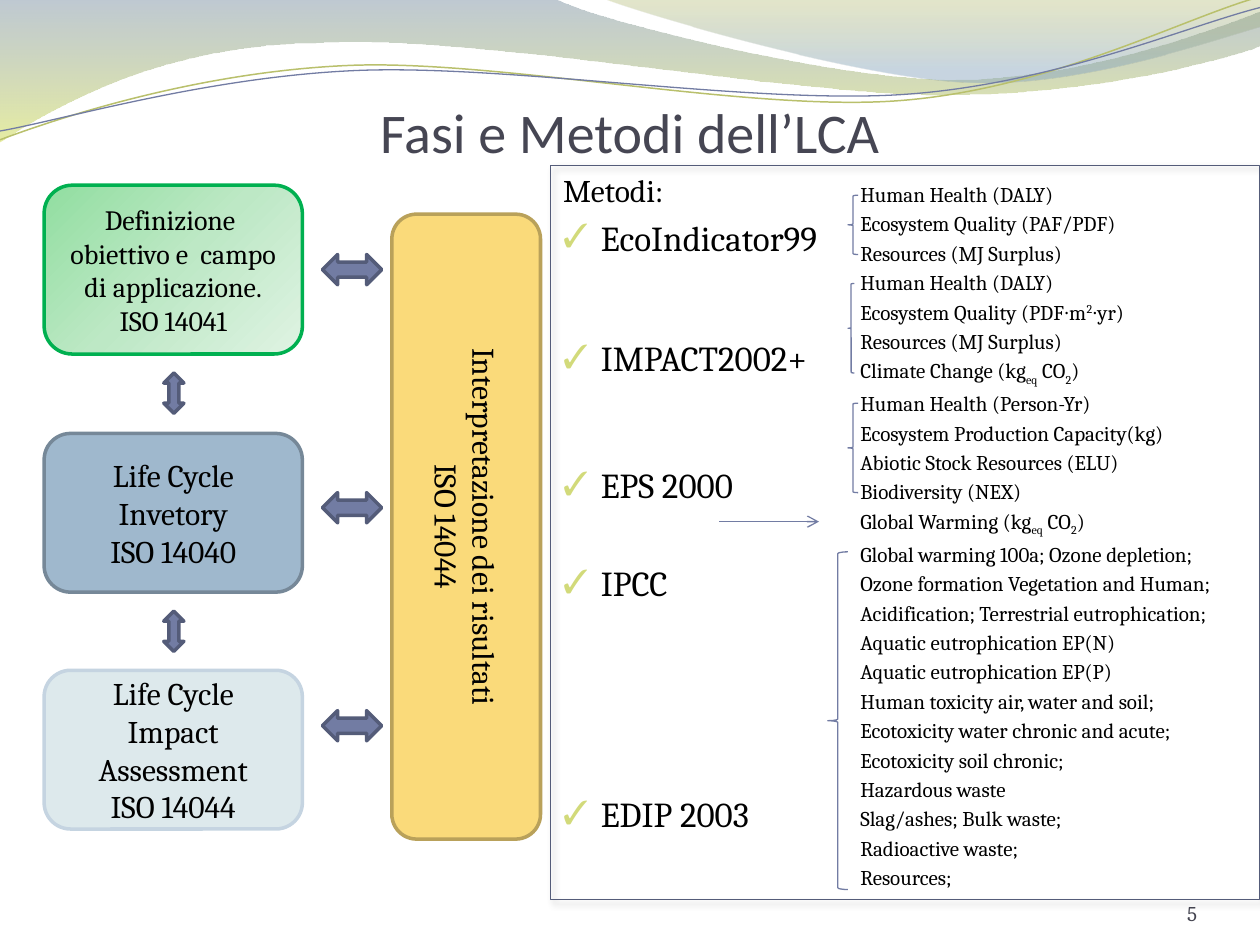
from lxml import etree
from pptx import Presentation
from pptx import util as u
from pptx.dml.color import RGBColor
from pptx.enum import shapes, text
from pptx.oxml import ns, parse_xml

Inches, Pt = u.Inches, u.Pt
KIND = shapes.MSO_SHAPE
ALIGN = text.PP_ALIGN
ANCHOR = text.MSO_ANCHOR

BLACK = RGBColor(0, 0, 0)
TITLE_GREY = RGBColor(0x46, 0x46, 0x53)
NUMBER_GREY = RGBColor(0x43, 0x43, 0x4F)
INDIGO = RGBColor(0x72, 0x7C, 0xA3)
DARK_INDIGO = RGBColor(0x54, 0x5C, 0x79)
OLIVE = RGBColor(0xB9, 0xC0, 0x6C)
LIME = RGBColor(0xD2, 0xDA, 0x7A)
GREEN = RGBColor(0x00, 0xB0, 0x50)
BLUE = RGBColor(0x9F, 0xB8, 0xCD)
SLATE = RGBColor(0x76, 0x88, 0x98)
PALE = RGBColor(0xDD, 0xE9, 0xEC)
PALE_EDGE = RGBColor(0xC5, 0xD4, 0xE1)
YELLOW = RGBColor(0xFA, 0xDA, 0x7A)
OCHRE = RGBColor(0xB9, 0xA1, 0x5A)

GREEN_STOPS = [(0, "91DEA0", 100), (50, "BDE8C5", 100), (100, "DFF3E3", 100)]

# Start point, segments (three points make a Bezier curve, one a straight line),
# gradient stops, line colour and width
WAVES = [
    ((0, -0.01), [[(4.4, -0.01)], [(4.76, 0.17), (6.64, 0.63), (7.58, 0.63)],
     [(8.53, 0.63), (9.58, 0.26), (10, 0.09)], [(10.01, 0.36)],
     [(9.83, 0.44), (8.7, 0.76), (7.46, 0.75)], [(6.22, 0.75), (3.82, 0.28), (2.57, 0.34)],
     [(1.29, 0.35), (0.46, 0.83), (-0.01, 1.13)]],
     [(0, "72889B", 45), (100, "D3DE57", 55)], None),
    ((4.79, -0.01), [[(5.09, 0.11), (6.82, 0.62), (7.69, 0.65)],
     [(8.56, 0.69), (9.61, 0.32), (10, 0.21)], [(10, 0)]],
     [(0, "A4AC50", 30), (80, "84A3BD", 45)], None),
    ((0, 1.11), [[(0.48, 0.93), (1.58, 0.57), (2.77, 0.52)],
     [(3.95, 0.47), (5.93, 0.89), (7.13, 0.8)], [(8.33, 0.71), (9.38, 0.15), (9.98, -0.02)]],
     None, (OLIVE, 0.85)),
    ((0, 1.04), [[(0.47, 0.96), (1.64, 0.61), (2.83, 0.56)],
     [(4.03, 0.51), (5.97, 0.83), (7.17, 0.75)], [(8.36, 0.67), (9.41, 0.21), (10, 0.06)]],
     None, (INDIGO, 0.75)),
]

# Method name and the space above it in points
METHODS = [("EcoIndicator99", 4), ("IMPACT2002+", 45), ("EPS 2000", 48.6),
           ("IPCC", 31.7), ("EDIP 2003", 108)]

# "|" separates runs; "^" raises a run and "_" lowers it
CATEGORIES = [
    "Human Health (DALY)", "Ecosystem Quality (PAF/PDF)", "Resources (MJ Surplus)",
    "Human Health (DALY)", "Ecosystem Quality (PDF∙m|^2|∙yr)", "Resources (MJ Surplus)",
    "Climate Change (kg|_eq| CO|_2|)",
    "Human Health (Person-Yr)", "Ecosystem Production Capacity(kg)",
    "Abiotic Stock Resources (ELU)", "Biodiversity (NEX)",
    "Global Warming (kg|_eq| CO|_2|)",
    "Global warming 100a; Ozone depletion;", "Ozone formation Vegetation and Human;",
    "Acidification; Terrestrial eutrophication;", "Aquatic eutrophication EP(N)",
    "Aquatic eutrophication EP(P)", "Human toxicity air, water and soil;",
    "Ecotoxicity water chronic and acute;", "Ecotoxicity soil chronic;",
    "Hazardous waste", "Slag/ashes; Bulk waste;", "Radioactive waste;", "Resources;",
]
BASELINES = {"^": "30000", "_": "-25000"}


def fill_gradient(shape, stops, angle):
    """Stops are (position %, colour, opacity %)."""
    stop_xml = "".join(
        f'<a:gs pos="{pos * 1000}"><a:srgbClr val="{color}">'
        f'<a:alpha val="{alpha * 1000}"/></a:srgbClr></a:gs>' for pos, color, alpha in stops)
    shape.fill.background()
    properties = shape._element.spPr
    properties.replace(properties.find(ns.qn("a:noFill")), parse_xml(
        f'<a:gradFill {ns.nsdecls("a")} rotWithShape="1"><a:gsLst>{stop_xml}</a:gsLst>'
        f'<a:lin ang="{angle * 60000}" scaled="0"/></a:gradFill>'))


def style(shape, fill=None, line=None, width=0.75):
    shape.shadow.inherit = False
    if fill is None:
        shape.fill.background()
    else:
        shape.fill.solid()
        shape.fill.fore_color.rgb = fill
    if line is None:
        shape.line.fill.background()
    else:
        shape.line.color.rgb = line
        shape.line.width = Pt(width)


def add_box(slide, kind, box, fill=None, line=None, width=0.75):
    shape = slide.shapes.add_shape(kind, *map(Inches, box))
    style(shape, fill, line, width)
    return shape


def write(paragraph, content, size, color=BLACK, font="Cambria", align=ALIGN.LEFT):
    for piece in content.split("|"):
        run = paragraph.add_run()
        run.text = piece.lstrip("^_")
        if piece[0] in BASELINES:
            run._r.get_or_add_rPr().set("baseline", BASELINES[piece[0]])
    paragraph.font.size, paragraph.font.name = Pt(size), font
    paragraph.font.color.rgb = color
    paragraph.alignment = align


def write_lines(frame, lines, size, **options):
    frame.word_wrap = True
    for index, line in enumerate(lines):
        paragraph = frame.add_paragraph() if index else frame.paragraphs[0]
        write(paragraph, line, size, **options)


def add_text(slide, box, lines, size, anchor=ANCHOR.TOP, **options):
    frame = slide.shapes.add_textbox(*map(Inches, box)).text_frame
    frame.vertical_anchor = anchor
    write_lines(frame, lines, size, **options)
    return frame


def bend(shape, segments):
    """Turn each run of three straight steps that stands for a curve into a Bezier."""
    steps = iter(list(shape._element.iter(ns.qn("a:lnTo"))))
    for segment in segments:
        first, *others = [next(steps) for _ in segment]
        if others:
            first.tag = ns.qn("a:cubicBezTo")
            for step in others:
                first.append(step[0])
                step.getparent().remove(step)


def add_waves(slide):
    for start, segments, stops, line in WAVES:
        points = [(Inches(x), Inches(y)) for segment in segments for x, y in segment]
        builder = slide.shapes.build_freeform(*map(Inches, start))
        builder.add_line_segments(points, close=bool(stops))
        wave = builder.convert_to_shape()
        bend(wave, segments)
        style(wave, None, *(line or ()))
        if stops:
            fill_gradient(wave, stops, 90)


def add_phases(slide, left, top):
    """Phases on the left, linked to the tall interpretation box."""
    phases = [
        (0, 1.34, None, GREEN, 16,
         ["Definizione  obiettivo e  campo di applicazione.", "ISO 14041"]),
        (1.97, 1.26, BLUE, SLATE, 18, ["Life Cycle Invetory", "ISO 14040"]),
        (3.85, 1.26, PALE, PALE_EDGE, 18, ["Life Cycle Impact Assessment", "ISO 14044"]),
    ]
    boxes = [((left, top + y, 2.05, height), *rest) for y, height, *rest in phases]
    boxes.append(((left + 2.76, top + 0.23, 1.18, 4.96), YELLOW, OCHRE, 18,
                  ["Interpretazione dei risultati", "ISO 14044"]))
    for box, fill, line, size, lines in boxes:
        shape = add_box(slide, KIND.ROUNDED_RECTANGLE, box, fill, line, 2)
        if fill is None:
            fill_gradient(shape, GREEN_STOPS, 45)
        shape.text_frame.vertical_anchor = ANCHOR.MIDDLE
        write_lines(shape.text_frame, lines, size, align=ALIGN.CENTER)
    shape.text_frame._txBody.bodyPr.set("vert", "vert")
    for y in (0.55, 2.44, 4.17):
        add_box(slide, KIND.LEFT_RIGHT_ARROW, (left + 2.21, top + y, 0.47, 0.24),
                INDIGO, DARK_INDIGO, 2)
    for y in (1.49, 3.38):
        add_box(slide, KIND.UP_DOWN_ARROW, (left + 0.95, top + y, 0.16, 0.32),
                INDIGO, DARK_INDIGO, 2)


def add_methods(slide, left, top):
    categories = add_text(slide, (left + 2.36, top + 0.08, 3.27, 5.91), CATEGORIES, 12)
    for paragraph in categories.paragraphs[1:]:
        paragraph.space_before = Pt(2.4)

    frame = add_text(slide, (left, top, 2.68, 5.64), ["Metodi:"], 18)
    for name, space in METHODS:
        paragraph = frame.add_paragraph()
        write(paragraph, name, 20)
        paragraph.space_before = Pt(space)
        properties = paragraph._p.get_or_add_pPr()
        properties.set("marL", str(Inches(0.3)))
        properties.set("indent", str(-Inches(0.3)))
        bullet = [f'<a:buClr {ns.nsdecls("a")}><a:srgbClr val="{LIME}"/></a:buClr>',
                  f'<a:buSzPct {ns.nsdecls("a")} val="95000"/>',
                  f'<a:buFont {ns.nsdecls("a")} typeface="Cambria"/>',
                  f'<a:buChar {ns.nsdecls("a")} char="✓"/>']
        position = properties.index(properties.find(ns.qn("a:spcBef"))) + 1
        for offset, item in enumerate(bullet):
            properties.insert(position + offset, parse_xml(item))

    arrow = slide.shapes.add_connector(
        shapes.MSO_CONNECTOR.STRAIGHT, Inches(left + 1.34), Inches(top + 2.83),
        Inches(left + 2.13), Inches(top + 2.83))
    arrow.line.color.rgb, arrow.line.width = INDIGO, Pt(0.75)
    etree.SubElement(arrow.line._get_or_add_ln(), ns.qn("a:tailEnd"), type="arrow")
    etree.SubElement(arrow._element.spPr, ns.qn("a:effectLst"))

    for x, y, width, height in [(2.2, 3.07, 0.16, 2.68), (2.36, 0.24, 0.08, 0.47),
                                (2.36, 0.94, 0.05, 0.71), (2.36, 1.89, 0.08, 0.71)]:
        add_box(slide, KIND.LEFT_BRACE, (left + x, top + y, width, height), None, INDIGO)

    border = add_box(slide, KIND.RECTANGLE, (left, top, 5.63, 5.83), None, DARK_INDIGO, 0.5)
    border._element.spPr.find(ns.qn("a:effectLst")).append(parse_xml(
        f'<a:outerShdw {ns.nsdecls("a")} blurRad="{Pt(4)}" dist="{Pt(3)}" dir="2700000">'
        '<a:srgbClr val="000000"><a:alpha val="40000"/></a:srgbClr></a:outerShdw>'))


def add_heading(slide):
    frame = add_text(slide, (0.5, 0.77, 9, 0.54), ["Fasi e Metodi dell’LCA"], 32, ANCHOR.BOTTOM,
                     color=TITLE_GREY, font="Calibri", align=ALIGN.CENTER)
    frame.margin_left = frame.margin_right = frame.margin_bottom = 0


def add_page_number(slide):
    frame = add_text(slide, (8.67, 6.95, 0.83, 0.4), ["5"], 12, ANCHOR.BOTTOM,
                     color=NUMBER_GREY, align=ALIGN.RIGHT)
    frame.margin_left = frame.margin_right = frame.margin_top = frame.margin_bottom = 0


def main():
    presentation = Presentation()
    presentation.slide_width, presentation.slide_height = Inches(10), Inches(7.5)
    slide = presentation.slides.add_slide(presentation.slide_layouts[6])
    add_waves(slide)
    add_heading(slide)
    add_phases(slide, 0.35, 1.47)
    add_methods(slide, 4.37, 1.31)
    add_page_number(slide)
    presentation.save("out.pptx")


if __name__ == "__main__":
    main()
